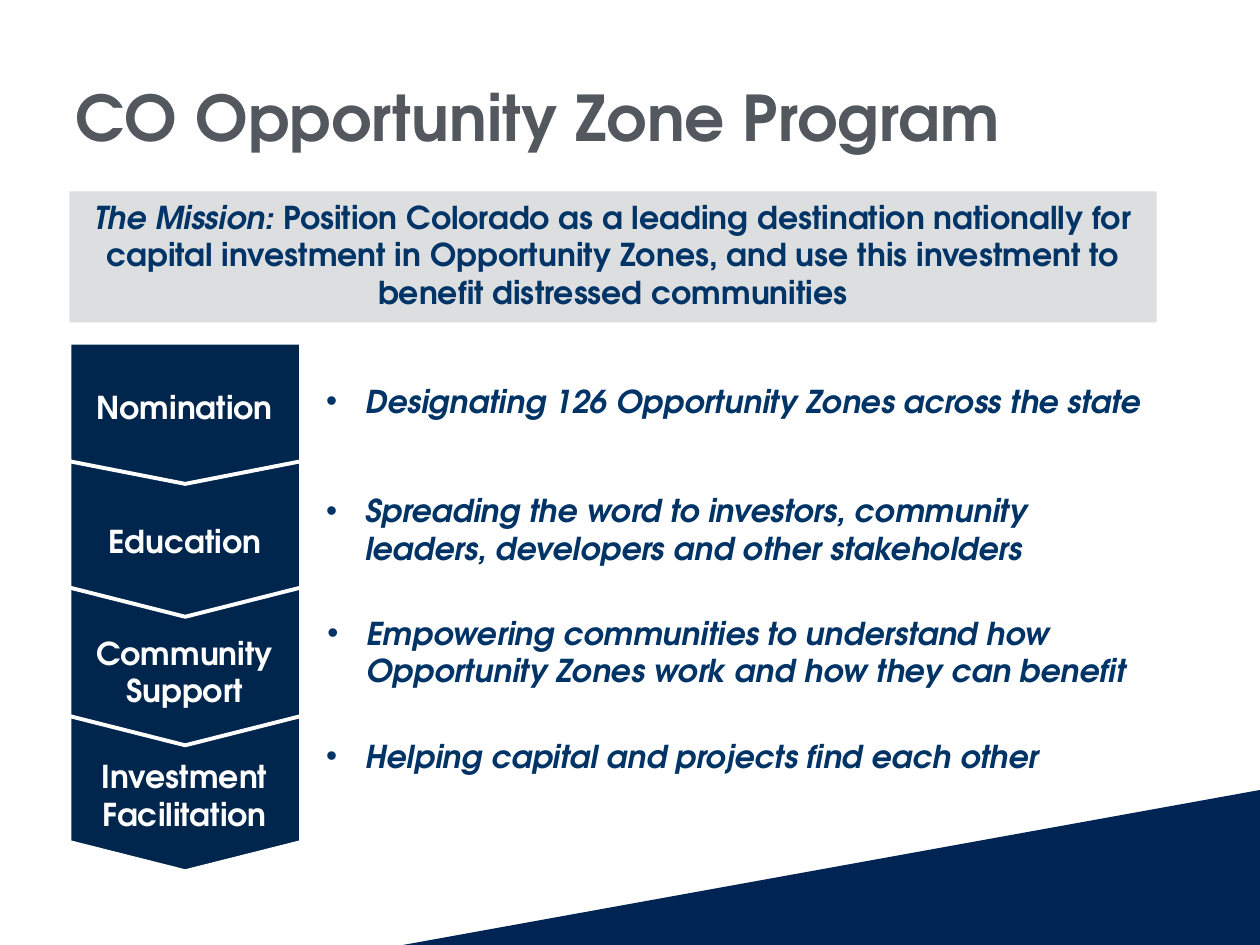
"""Builds the opportunity zone program slide."""
from lxml import etree
from pptx import Presentation, util as u
from pptx.dml.color import RGBColor
from pptx.enum import shapes, text
from pptx.oxml.ns import qn

NAVY = RGBColor(0x00, 0x24, 0x53)
CHEVRON = RGBColor(0x00, 0x26, 0x4D)
BLUE = RGBColor(0x00, 0x33, 0x66)
SLATE = RGBColor(0x53, 0x58, 0x5F)
SILVER = RGBColor(0xDC, 0xDE, 0xE0)
WHITE = RGBColor(0xFF, 0xFF, 0xFF)
FONT = "TeX Gyre Adventor"
COLUMNS, ROWS = 100, 75

STEPS = [
    ("Nomination", 30.3, 27.2, 11.2, 24.9, 29.8, 4,
     "Designating 126 Opportunity Zones across the state"),
    ("Education", 40.9, 34.45, 14.5, 24.9, 38.5, 7.1,
     "Spreading the word to investors, community leaders, developers and other stakeholders"),
    ("Community Support", 49.8, 44.65, 14.5, 25, 48.2, 7.1,
     "Empowering communities to understand how Opportunity Zones work and how they can benefit"),
    ("Investment Facilitation", 59.6, 54.65, 14.5, 24.9, 58, 4,
     "Helping capital and projects find each other"),
]


def write(para, words, size=18, color=BLUE, italic=False, align=text.PP_ALIGN.LEFT):
    para.alignment = align
    span = para.add_run()
    span.text = words
    font = span.font
    font.name, font.size, font.bold, font.italic = FONT, u.Pt(size), True, italic
    font.color.rgb = color


class Slide:
    def __init__(self, deck):
        self.column = deck.slide_width / COLUMNS
        self.row = deck.slide_height / ROWS
        self.page = deck.slides.add_slide(deck.slide_layouts[5])

    def place(self, left, top, width, height):
        return (u.Emu(round(left * self.column)), u.Emu(round(top * self.row)),
                u.Emu(round(width * self.column)), u.Emu(round(height * self.row)))

    def title(self, words, *area):
        box = self.page.shapes.title
        box.left, box.top, box.width, box.height = self.place(*area)
        box.text_frame.vertical_anchor = text.MSO_ANCHOR.MIDDLE
        write(box.text_frame.paragraphs[0], words, size=36, color=SLATE)

    def shape(self, kind, fill, *area, line=None):
        shape = self.page.shapes.add_shape(kind, *self.place(*area))
        shape.shadow.inherit = False
        shape.fill.solid()
        shape.fill.fore_color.rgb = fill
        if line is None:
            shape.line.fill.background()
        else:
            shape.line.color.rgb = line
            shape.line.width = u.Pt(2.25)
        return shape

    def corner(self, *area):
        triangle = self.shape(shapes.MSO_SHAPE.RIGHT_TRIANGLE, NAVY, *area)
        triangle._element.spPr.find(qn("a:xfrm")).set("flipH", "1")

    def banner(self, lead, words, *area):
        frame = self.shape(shapes.MSO_SHAPE.RECTANGLE, SILVER, *area).text_frame
        frame.word_wrap = True
        frame.vertical_anchor = text.MSO_ANCHOR.TOP
        para = frame.paragraphs[0]
        write(para, lead, italic=True, align=text.PP_ALIGN.CENTER)
        write(para, words, align=text.PP_ALIGN.CENTER)

    def chevron(self, left, top, width, height):
        shift = (width - height) / 2
        plate = self.shape(shapes.MSO_SHAPE.PENTAGON, CHEVRON,
                           left + shift, top - shift, height, width, line=WHITE)
        plate.rotation = 90
        plate.adjustments[0] = 0.16

    def textbox(self, *area):
        frame = self.page.shapes.add_textbox(*self.place(*area)).text_frame
        frame.word_wrap = True
        frame.auto_size = text.MSO_AUTO_SIZE.SHAPE_TO_FIT_TEXT
        return frame.paragraphs[0]

    def label(self, words, *area):
        write(self.textbox(*area), words, color=WHITE, align=text.PP_ALIGN.CENTER)

    def bullet(self, words, *area):
        para = self.textbox(*area)
        properties = para._p.get_or_add_pPr()
        indent = u.Inches(0.31)
        properties.set("marL", str(indent))
        properties.set("indent", str(-indent))
        etree.SubElement(properties, qn("a:buFont")).set("typeface", "Arial")
        etree.SubElement(properties, qn("a:buChar")).set("char", "•")
        write(para, words, italic=True)


def main():
    deck = Presentation()
    deck.slide_width, deck.slide_height = u.Inches(10), u.Inches(7.5)
    slide = Slide(deck)
    slide.corner(32, 62.7, 68, 12.3)
    slide.title("CO Opportunity Zone Program", 5, 3, 90, 12.5)
    slide.banner("The Mission: ",
                 "Position Colorado as a leading destination nationally for capital "
                 "investment in Opportunity Zones, and use this investment to benefit "
                 "distressed communities", 5.5, 15.2, 86.3, 10.4)
    for name, name_top, top, height, left, detail_top, detail_height, detail in reversed(STEPS):
        slide.chevron(5.5, top, 18.4, height)
        slide.label(name, 6.55, name_top, 16.2, detail_height)
        slide.bullet(detail, left, detail_top, 68, detail_height)
    deck.save("out.pptx")


if __name__ == "__main__":
    main()
